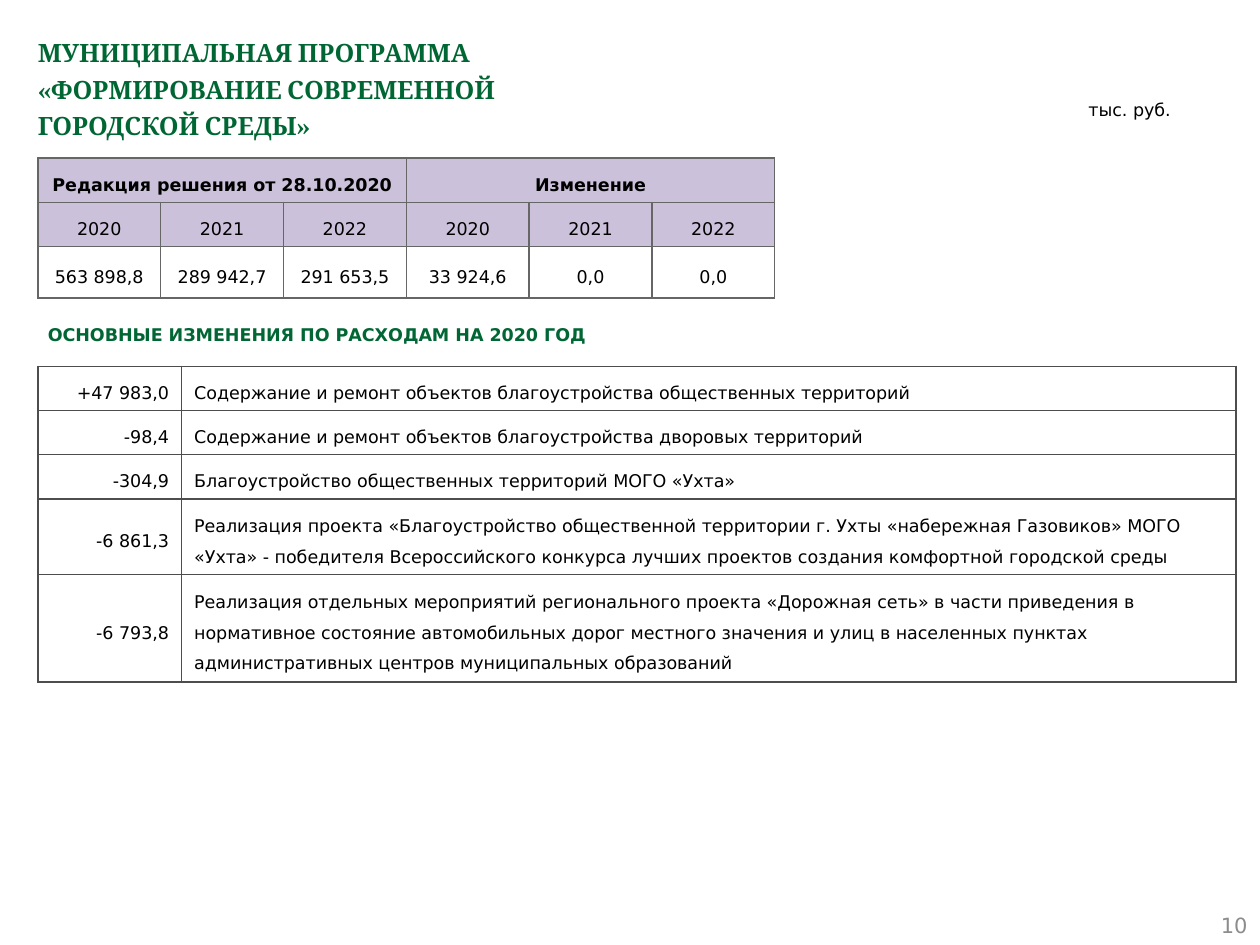
import pptx
import pptx.util
import pptx.dml.color
import pptx.enum.shapes
import pptx.enum.text
import pptx.oxml
import pptx.oxml.ns

Pt = pptx.util.Pt
RGBColor = pptx.dml.color.RGBColor
Align = pptx.enum.text.PP_ALIGN
Anchor = pptx.enum.text.MSO_ANCHOR

GREEN = RGBColor(0x00, 0x66, 0x33)
BLACK = RGBColor(0x00, 0x00, 0x00)
PAGE_GRAY = RGBColor(0x8C, 0x8C, 0x8C)
LILAC = RGBColor(0xCC, 0xC1, 0xDA)
CHANGES_BORDER = RGBColor(0x4D, 0x4D, 0x4D)
BUDGET_BORDER = RGBColor(0x66, 0x66, 0x66)

TITLE_FONT = "Cambria"
BODY_FONT = "DejaVu Sans"

TITLE = "МУНИЦИПАЛЬНАЯ ПРОГРАММА \n«ФОРМИРОВАНИЕ СОВРЕМЕННОЙ\nГОРОДСКОЙ СРЕДЫ»"
BUDGET_ROWS = [
    ["Редакция решения от 28.10.2020", "", "", "Изменение", "", ""],
    ["2020", "2021", "2022"] * 2,
    ["563 898,8", "289 942,7", "291 653,5", "33 924,6", "0,0", "0,0"],
]
CHANGES = [
    ["+47 983,0", "Содержание и ремонт объектов благоустройства общественных территорий"],
    ["-98,4", "Содержание и ремонт объектов благоустройства дворовых территорий"],
    ["-304,9", "Благоустройство общественных территорий МОГО «Ухта»"],
    ["-6 861,3", "Реализация проекта «Благоустройство общественной территории г. Ухты "
     "«набережная Газовиков» МОГО «Ухта» - победителя Всероссийского конкурса "
     "лучших проектов создания комфортной городской среды"],
    ["-6 793,8", "Реализация отдельных мероприятий регионального проекта «Дорожная сеть» "
     "в части приведения в нормативное состояние автомобильных дорог местного значения "
     "и улиц в населенных пунктах административных центров муниципальных образований"],
]


def write_text(text_frame, text, size=10, color=BLACK, bold=False, align=Align.LEFT,
               spacing=1.0, font=BODY_FONT):
    paragraph = text_frame.paragraphs[0]
    paragraph.text = text
    paragraph.alignment = align
    paragraph.line_spacing = spacing
    for run in paragraph.runs:
        run.font.name = font
        run.font.size = Pt(size)
        run.font.bold = bold
        run.font.color.rgb = color


def add_title(slide):
    title = slide.shapes.title
    title.left, title.top, title.width, title.height = Pt(14.4), Pt(14.4), Pt(692), Pt(57)
    title.text_frame.auto_size = pptx.enum.text.MSO_AUTO_SIZE.NONE
    title.text_frame.vertical_anchor = Anchor.TOP
    write_text(title.text_frame, TITLE, 14.4, GREEN, True, spacing=1.2, font=TITLE_FONT)


def add_label(slide, box, text, anchor=Anchor.TOP, **style):
    shape = slide.shapes.add_textbox(*map(Pt, box))
    shape.text_frame.word_wrap = True
    shape.text_frame.vertical_anchor = anchor
    write_text(shape.text_frame, text, **style)


def add_heading(slide, box, text):
    shape = slide.shapes.add_shape(pptx.enum.shapes.MSO_SHAPE.PENTAGON, *map(Pt, box))
    shape.adjustments[0] = 0
    shape.shadow.inherit = False
    shape.fill.background()
    shape.line.fill.background()
    shape.text_frame.word_wrap = True
    shape.text_frame.vertical_anchor = Anchor.MIDDLE
    write_text(shape.text_frame, text, color=GREEN, bold=True)


def set_borders(cell, color):
    properties = cell._tc.get_or_add_tcPr()
    for index, side in enumerate(("lnL", "lnR", "lnT", "lnB")):
        line = pptx.oxml.parse_xml(
            f'<a:{side} {pptx.oxml.ns.nsdecls("a")} w="{Pt(1)}"><a:solidFill>'
            f'<a:srgbClr val="{color}"/></a:solidFill></a:{side}>')
        properties.insert(index, line)


def add_grid(slide, left, top, column_widths, row_heights, border):
    frame = slide.shapes.add_table(
        len(row_heights), len(column_widths), Pt(left), Pt(top),
        Pt(sum(column_widths)), Pt(sum(row_heights)))
    table = frame.table
    table.first_row = False
    table.horz_banding = False
    for column, width in zip(table.columns, column_widths):
        column.width = Pt(width)
    for row, height in zip(table.rows, row_heights):
        row.height = Pt(height)
    for cell in table.iter_cells():
        cell.vertical_anchor = Anchor.MIDDLE
        cell.fill.background()
        set_borders(cell, border)
    return table


def add_budget_table(slide):
    table = add_grid(slide, 21.6, 90.4, [70.2] * 6, [25, 25, 29.5], BUDGET_BORDER)
    for first in (0, 3):
        table.cell(0, first).merge(table.cell(0, first + 2))
    for row, texts in enumerate(BUDGET_ROWS):
        for column, text in enumerate(texts):
            cell = table.cell(row, column)
            cell.margin_left = cell.margin_right = Pt(3.6)
            cell.margin_top = cell.margin_bottom = Pt(3.6)
            if row < 2:
                cell.fill.solid()
                cell.fill.fore_color.rgb = LILAC
            write_text(cell.text_frame, text, bold=row == 0, align=Align.CENTER, spacing=1.5)


def add_changes_table(slide):
    table = add_grid(slide, 21.6, 209.3, [82.2, 602.6], [24.7, 24.7, 24.7, 42, 59.6],
                     CHANGES_BORDER)
    for row, texts in enumerate(CHANGES):
        for column, (text, align) in enumerate(zip(texts, (Align.RIGHT, Align.LEFT))):
            write_text(table.cell(row, column).text_frame, text, align=align, spacing=1.5)


def main():
    presentation = pptx.Presentation()
    presentation.slide_width, presentation.slide_height = Pt(720), Pt(540)
    slide = presentation.slides.add_slide(presentation.slide_layouts[5])
    add_title(slide)
    add_label(slide, (552.2, 514, 167.8, 28.8), "10", Anchor.MIDDLE,
              size=12, color=PAGE_GRAY, align=Align.RIGHT)
    add_heading(slide, (20.2, 175.7, 383, 31), "ОСНОВНЫЕ ИЗМЕНЕНИЯ ПО РАСХОДАМ НА 2020 ГОД")
    add_changes_table(slide)
    add_label(slide, (614.9, 50.4, 72.7, 21.6), "тыс. руб.", spacing=1.2)
    add_budget_table(slide)
    presentation.save("out.pptx")


if __name__ == "__main__":
    main()
